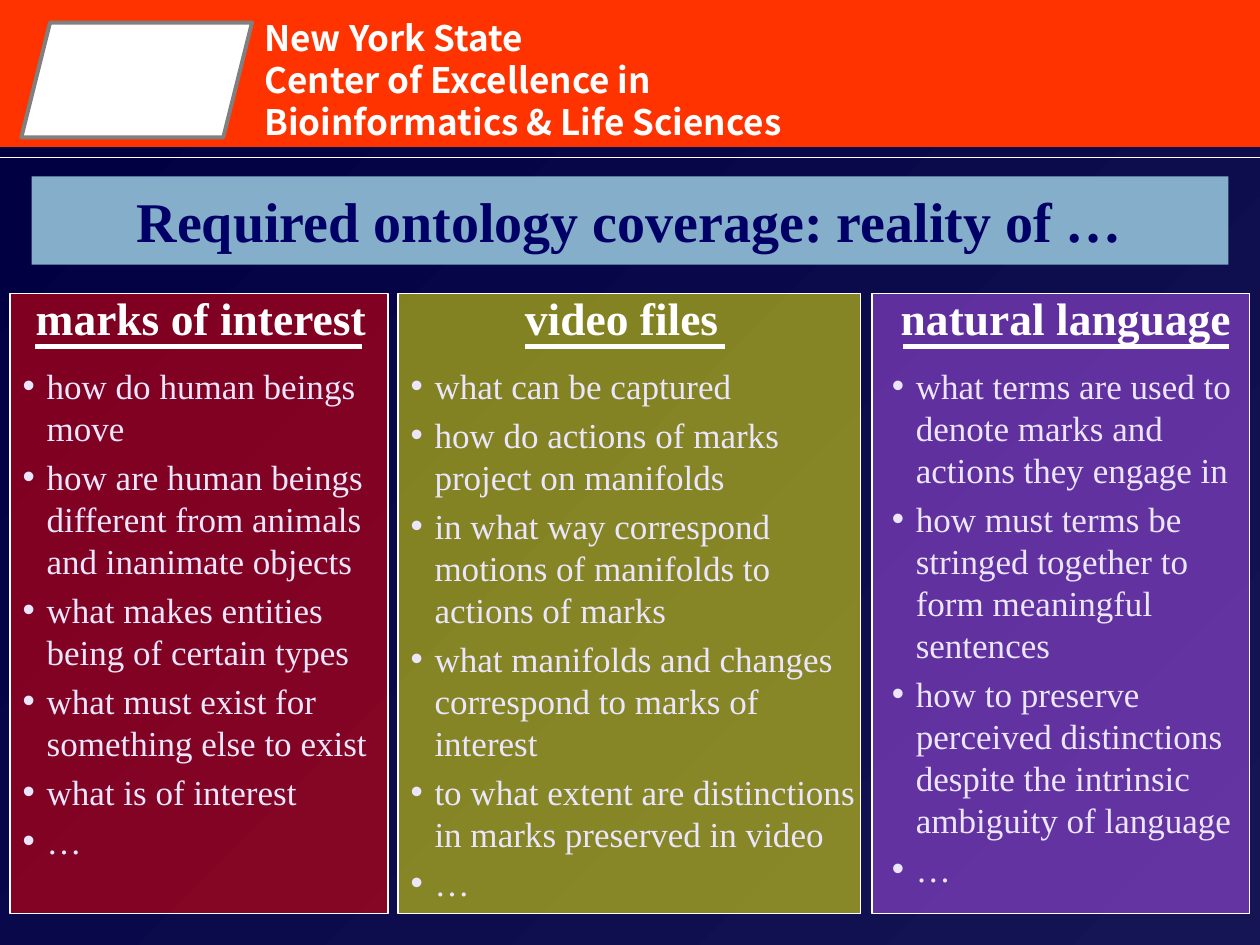
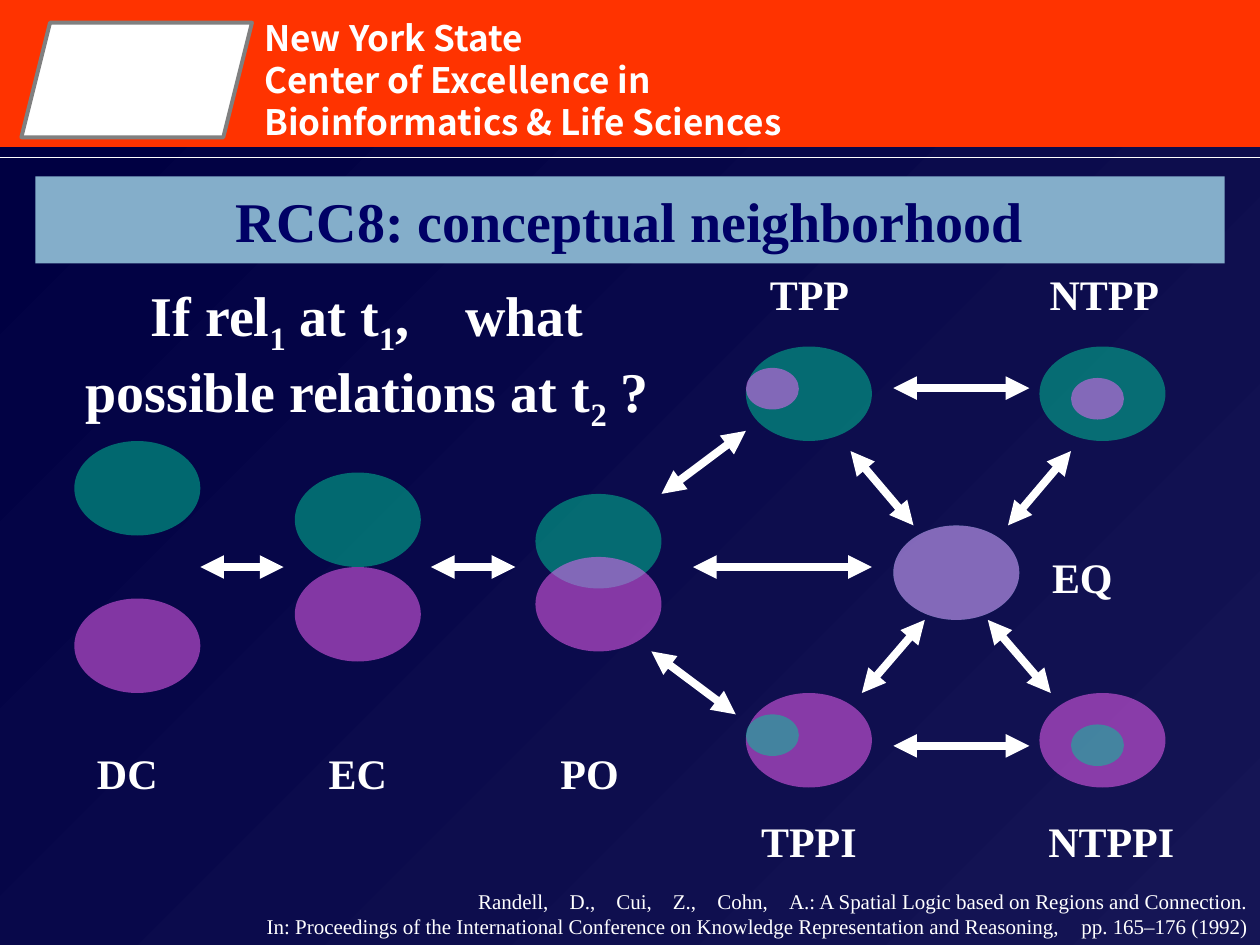
from lxml.etree import SubElement as Sub
from pptx import Presentation
from pptx.dml.color import RGBColor as Rgb
from pptx.enum.shapes import MSO_CONNECTOR as Conn, MSO_SHAPE as Form
from pptx.enum.text import MSO_ANCHOR as Anchor, MSO_AUTO_SIZE as Auto, PP_ALIGN as Align
from pptx.oxml.ns import qn
from pptx.util import Inches, Pt

HUES = {
    "orange": "FF3300", "dark": "000042", "night": "151555", "white": "FFFFFF",
    "gray": "808080", "steel": "84AECA", "navy": "000066", "pale": "EBE6FC",
    "red": "FF0000", "yellow": "FFFF00", "violet": "B453EF",
    "green": "00CC99", "pink": "FF66FF",
}
RGB = {name: Rgb.from_string(code) for name, code in HUES.items()}
SERIF, SANS = "Times New Roman", "Noto Sans CJK KR"


def write(frame, paras, size, hue="white", bold=True, align=Align.LEFT,
          face=SERIF, pitch=None, bullet=False, wrap=True):
    """Fill a frame; a lone digit is a subscript, a lone space a wide gap."""
    frame.word_wrap = wrap
    frame.auto_size = Auto.NONE
    for i, runs in enumerate(paras):
        para = frame.add_paragraph() if i else frame.paragraphs[0]
        if bullet:
            props = para._p.get_or_add_pPr()
            props.set("marL", str(Inches(0.19)))
            props.set("indent", str(-Inches(0.19)))
            Sub(props, qn("a:buFont")).set("typeface", "Arial")
            Sub(props, qn("a:buChar")).set("char", "•")
        para.alignment = align
        para.space_before = Pt(4 if bullet and i else 0)
        if pitch:
            para.line_spacing = Pt(pitch)
        for words in runs:
            run = para.add_run()
            run.text = words
            font = run.font
            font.name, font.size, font.bold = face, Pt(size), bold
            font.color.rgb = RGB[hue]
            if words.isdigit():
                run._r.get_or_add_rPr().set("baseline", "-25000")
            elif words == " ":
                run._r.get_or_add_rPr().set("spc", str(size * 75))


def shape(page, form, place, hue, edge=None, width=0.75, clear=False):
    """Add a filled shape, half transparent if clear."""
    item = page.shapes.add_shape(form, *map(Inches, place))
    item.shadow.inherit = False
    item.fill.solid()
    item.fill.fore_color.rgb = RGB[hue]
    if clear:
        color = item.element.find(".//" + qn("a:srgbClr"))
        Sub(color, qn("a:alpha")).set("val", "50000")
    if edge:
        item.line.color.rgb = RGB[edge]
        item.line.width = Pt(width)
    else:
        item.line.fill.background()
    return item


# Columns of slide 1: panel, hue, underline, heading place, heading, list place, items
columns = [
    ((0.08, 3), "red", (0.28, 2.87), (0.17, 2.85), "marks of interest", (0.08, 3), [
        "how do human beings move",
        "how are human beings different from animals and inanimate objects",
        "what makes entities being of certain types",
        "what must exist for something else to exist",
        "what is of interest",
        "…"]),
    ((3.16, 3.67), "yellow", (4.17, 5.75), (4.06, 1.75), "video files", (3.16, 3.75), [
        "what can be captured",
        "how do actions of marks project on manifolds",
        "in what way correspond motions of manifolds to actions of marks",
        "what manifolds and changes correspond to marks of interest",
        "to what extent are distinctions in marks preserved in video",
        "…"]),
    ((6.92, 3), "violet", (7.17, 9.75), (6.96, 3), "natural language", (6.98, 3), [
        "what terms are used to denote marks and actions they engage in",
        "how must terms be stringed together to form meaningful sentences",
        "how to preserve perceived distinctions despite the intrinsic ambiguity of language",
        "…"]),
]
panels = [(Form.RECTANGLE, (x, 2.33, w, 4.92), hue, "white")
          for (x, w), hue, *_ in columns]
unders = [(x1, 2.75, x2, 2.75) for _, _, (x1, x2), *_ in columns]

# Regions of slide 2, from back to front
BIG, SMALL = (1, 0.75), (0.42, 0.33)
regions = [(Form.OVAL, (x, y, *size), hue, None) for x, y, size, hue in [
    (0.59, 3.5, BIG, "green"), (0.59, 4.75, BIG, "pink"),
    (2.34, 3.75, BIG, "green"), (2.34, 4.5, BIG, "pink"),
    (4.25, 3.92, BIG, "green"), (4.25, 4.42, BIG, "pink"),
    (7.09, 4.17, BIG, "green"), (7.09, 4.17, BIG, "pink"),
    (5.92, 2.75, BIG, "green"), (5.92, 2.92, SMALL, "pink"),
    (5.92, 5.5, BIG, "pink"), (5.92, 5.67, SMALL, "green"),
    (8.25, 2.75, BIG, "green"), (8.5, 3, SMALL, "pink"),
    (8.25, 5.5, BIG, "pink"), (8.5, 5.75, SMALL, "green"),
]]
arrows = [
    (1.59, 4.5, 2.25, 4.5), (3.42, 4.5, 4.09, 4.5), (5.5, 4.5, 6.92, 4.5),
    (5.25, 3.92, 5.92, 3.42), (5.17, 5.17, 5.84, 5.67),
    (8, 4.17, 8.5, 3.58), (7.25, 4.17, 6.75, 3.58),
    (6.84, 5.5, 7.34, 4.92), (8.34, 5.5, 7.84, 4.92),
    (7.09, 3.08, 8.17, 3.08), (7.09, 5.92, 8.17, 5.92),
]
labels = [
    ("DC", 0.67, 5.88, 0.68), ("EC", 2.51, 5.88, 0.66), ("PO", 4.35, 5.88, 0.66),
    ("EQ", 8.25, 4.33, 0.68), ("TPP", 6.01, 2.08, 0.83), ("NTPP", 8.23, 2.08, 1.07),
    ("TPPI", 5.94, 6.42, 0.96), ("NTPPI", 8.22, 6.42, 1.2),
]

deck = Presentation()
deck.slide_width, deck.slide_height = Inches(10), Inches(7.5)

# Layout, title, title place, shapes, lines, line width, arrowheads
plans = [
    (1, "Required ontology coverage: reality of …", (0.25, 1.4, 9.5, 0.7),
     panels, unders, 3, False),
    (5, "RCC8: conceptual neighborhood", (0.28, 1.4, 9.44, 0.69),
     regions, arrows, 4.5, True),
]
pages = []
for layout, name, place, forms, lines, weight, heads in plans:
    page = deck.slides.add_slide(deck.slide_layouts[layout])
    pages.append(page)

    # Background and banner
    page.background.fill.solid()
    page.background.fill.fore_color.rgb = RGB["orange"]
    field = shape(page, Form.RECTANGLE, (0, 1.17, 10, 6.33), "dark")
    field.fill.gradient()
    field.fill.gradient_angle = 315
    for stop, hue in zip(field.fill.gradient_stops, ("dark", "night")):
        stop.color.rgb = RGB[hue]
    shape(page, Form.PARALLELOGRAM, (0.17, 0.18, 1.83, 0.91), "white", "gray", 2.25)
    banner = page.shapes.add_textbox(*map(Inches, (2, 0.08, 4.58, 1.23)))
    write(banner.text_frame, [["New York State"],
          ["Center of Excellence in Bioinformatics & Life Sciences"]],
          20, face=SANS, pitch=24)

    # Shapes and lines
    for form, spot, hue, edge in forms:
        shape(page, form, spot, hue, edge, clear=True)
    rules = [((0, 1.25, 10, 1.25), 0.75, False)]
    rules += [(ends, weight, heads) for ends in lines]
    for ends, width, tips in rules:
        rule = page.shapes.add_connector(Conn.STRAIGHT, *map(Inches, ends))
        rule.line.color.rgb = RGB["white"]
        rule.line.width = Pt(width)
        if tips:
            stroke = rule.line._get_or_add_ln()
            for tip in ("a:headEnd", "a:tailEnd"):
                Sub(stroke, qn(tip)).set("type", "triangle")
        Sub(rule.element.spPr, qn("a:effectLst"))

    # Title, brought in front of the field
    title = page.shapes.title
    page.shapes.element.append(title.element)
    title.left, title.top, title.width, title.height = map(Inches, place)
    title.fill.solid()
    title.fill.fore_color.rgb = RGB["steel"]
    title.text_frame.vertical_anchor = Anchor.MIDDLE
    write(title.text_frame, [[name]], 32, "navy", align=Align.CENTER)

# Slide 1: headings and lists
first, second = pages
for i, (_, _, _, (x, w), head, (left, wide), items) in enumerate(columns):
    box = first.shapes.add_textbox(*map(Inches, (x, 2.25, w, 0.54)))
    write(box.text_frame, [[head]], 26, align=Align.CENTER, wrap=False)
    place = [Inches(n) for n in (left, 2.84, wide, 4.5)]
    if i:
        body = first.shapes.add_textbox(*place)
    else:
        body = first.placeholders[1]
        first.shapes.element.append(body.element)
        body.left, body.top, body.width, body.height = place
    write(body.text_frame, [[item] for item in items], 20, "pale",
          bold=False, pitch=24, bullet=True)

# Slide 2: labels, question and citation
for name, x, y, w in labels:
    box = second.shapes.add_textbox(*map(Inches, (x, y, w, 0.5)))
    write(box.text_frame, [[name]], 24, align=Align.CENTER, wrap=False)
ask = second.shapes.add_textbox(*map(Inches, (0.33, 2.18, 5.17, 1.17)))
write(ask.text_frame,
      [["If rel", "1", " at t", "1", ",", " ", "what possible relations at t", "2", " ?"]],
      32, align=Align.CENTER, pitch=43.4)
cite = second.shapes.add_textbox(*map(Inches, (0, 7, 10, 0.5)))
write(cite.text_frame, [
    ["Randell,", " ", "D.,", " ", "Cui,", " ", "Z.,", " ", "Cohn,", " ",
     "A.: A Spatial Logic based on Regions and Connection."],
    ["In: Proceedings of the International Conference on Knowledge Representation "
     "and Reasoning,", " ", "pp. 165–176 (1992)"],
], 12, bold=False, align=Align.RIGHT, pitch=14.4)

deck.save("out.pptx")
